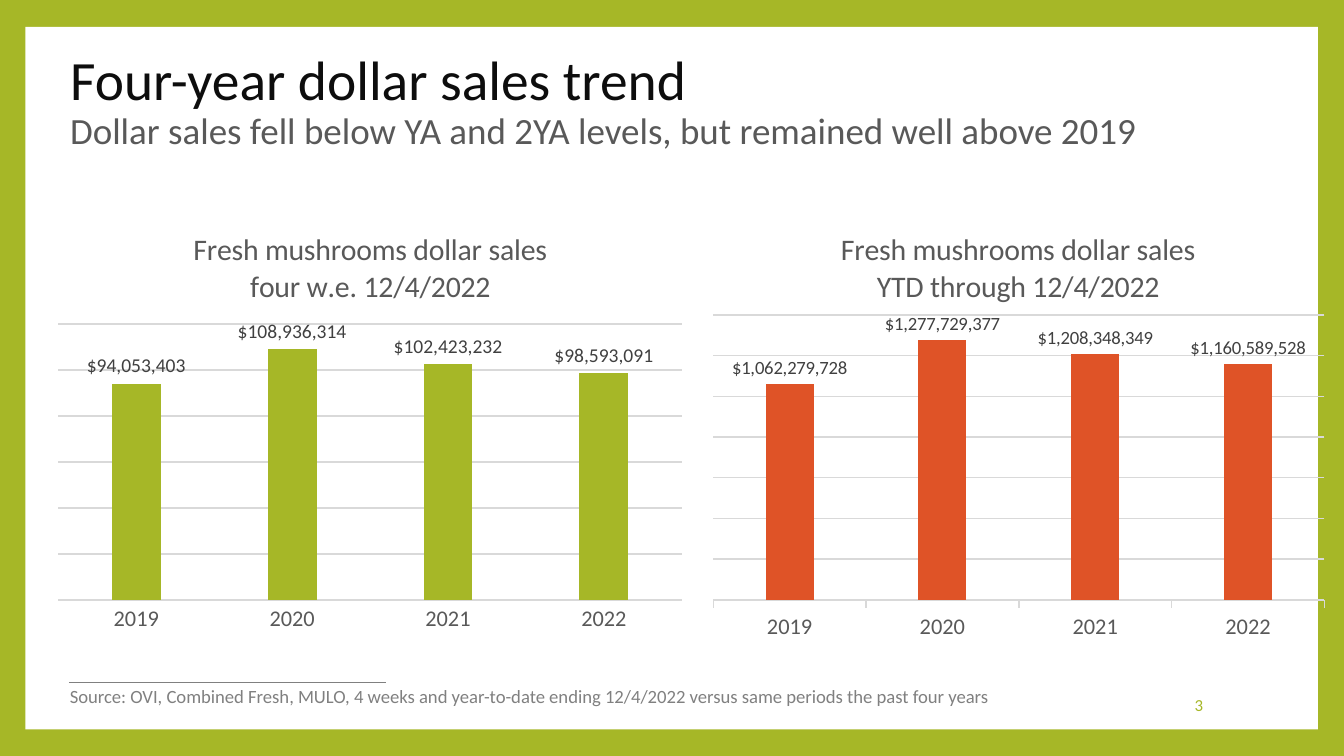
from copy import deepcopy
from pptx import Presentation
from pptx.chart.data import CategoryChartData
from pptx.dml.color import RGBColor
from pptx.enum.chart import XL_CHART_TYPE as ChartType, XL_LABEL_POSITION as LabelPos, XL_TICK_MARK as Tick
from pptx.enum.shapes import MSO_CONNECTOR as Connector, MSO_SHAPE as Preset
from pptx.enum.text import MSO_ANCHOR as Anchor, MSO_AUTO_SIZE as AutoSize, PP_ALIGN as Align
from pptx.oxml import parse_xml
from pptx.oxml.ns import nsdecls, qn
from pptx.util import Cm, Pt

GREEN, ORANGE, GRID = "A6B727", "DF5327", "D9D9D9"
MONEY = "\\$#,##0"
YEARS = ["2019", "2020", "2021", "2022"]
HEADING = [
    ("Four-year dollar sales trend", {"size": 29.7, "color": "0D0D0D"}),
    ("Dollar sales fell below YA and 2YA levels, but remained well above 2019", {"size": 19.8, "color": "595959"}),
]
PAGE_NUMBER = "3"
SOURCE = ("Source: OVI, Combined Fresh, MULO, 4 weeks and year-to-date ending 12/4/2022 "
          "versus same periods the past four years")
CHARTS = [
    {
        "title": ["Fresh mushrooms dollar sales", "four w.e. 12/4/2022"],
        "sales": [94053403, 108936314, 102423232, 98593091],
        "color": GREEN, "label_size": 10.5, "tick": Tick.NONE,
        "top_value": 120e6, "step": 20e6,
        "left": 1.09, "width": 11.81,
        "title_at": {"x": 0.21, "y": 0.04},
        "plot_at": {"x": 0, "y": 0.26, "w": 1, "h": 0.62},
    },
    {
        "title": ["Fresh mushrooms dollar sales", "YTD through 12/4/2022"],
        "sales": [1062279728, 1277729377, 1208348349, 1160589528],
        "color": ORANGE, "label_size": 10, "tick": Tick.OUTSIDE,
        "top_value": 1.4e9, "step": 0.2e9,
        "left": 13.11, "width": 12.29,
        "title_at": {"x": 0.22, "y": 0.04},
        "plot_at": {"x": 0.03, "y": 0.24, "w": 0.94, "h": 0.64},
    },
]
CHART_TOP, CHART_HEIGHT = 3.94, 8.41


def rgb(color):
    return RGBColor.from_string(color)


def style(font, size, color):
    for name, value in {"name": "Calibri", "size": Pt(size), "bold": False}.items():
        setattr(font, name, value)
    font.color.rgb = rgb(color)


def draw_line(line, color, width):
    line.color.rgb = rgb(color)
    line.width = Pt(width)


def add_text(slide, box, text, size, color, **frame_format):
    frame = slide.shapes.add_textbox(*map(Cm, box)).text_frame
    for name, value in frame_format.items():
        setattr(frame, name, value)
    paragraph = frame.paragraphs[0]
    run = paragraph.add_run()
    run.text = text
    style(run.font, size, color)
    return paragraph


def place(parent, position, target=""):
    for old in parent.findall(qn("c:layout")):
        parent.remove(old)
    modes = "".join(f'<c:{axis}Mode val="edge"/>' for axis in "xy")
    sizes = "".join(f'<c:{key} val="{value}"/>' for key, value in position.items())
    layout = parse_xml(f'<c:layout {nsdecls("c")}><c:manualLayout>{target}{modes}{sizes}'
                       '</c:manualLayout></c:layout>')
    text = parent.find(qn("c:tx"))
    parent.insert(0 if text is None else 1, layout)


def add_heading(slide):
    title = slide.shapes.title
    box = {"left": 1.07, "top": 0.94, "width": 24, "height": 2.01}
    for name, value in box.items():
        setattr(title, name, Cm(value))
    title.element.getparent().append(title.element)
    title.text_frame.vertical_anchor = Anchor.MIDDLE
    paragraph = title.text_frame.paragraphs[0]
    paragraph.alignment = Align.LEFT
    paragraph.line_spacing = 0.9
    for index, (text, look) in enumerate(HEADING):
        if index:
            paragraph.add_line_break()
            line_break = paragraph.runs[0].font
            paragraph._p.findall(qn("a:br"))[-1].append(deepcopy(line_break._rPr))
        run = paragraph.add_run()
        run.text = text
        style(run.font, **look)


def add_sales_chart(slide, content):
    data = CategoryChartData(number_format=MONEY)
    data.categories = YEARS
    data.add_series("Series 1", content["sales"])
    box = map(Cm, (content["left"], CHART_TOP, content["width"], CHART_HEIGHT))
    chart = slide.shapes.add_chart(ChartType.COLUMN_CLUSTERED, *box, data).chart
    style(chart.font, 10, "000000")
    chart.has_legend = False

    title = chart.chart_title.text_frame
    for index, line in enumerate(content["title"]):
        paragraph = title.add_paragraph() if index else title.paragraphs[0]
        run = paragraph.add_run()
        run.text = line
        style(run.font, 16, "595959")
    place(chart.chart_title._element, content["title_at"])

    years = chart.category_axis
    years.major_tick_mark = content["tick"]
    style(years.tick_labels.font, 12, "595959")
    draw_line(years.format.line, GRID, 0.75)

    dollars = chart.value_axis
    scale = {"visible": False, "minimum_scale": 0, "maximum_scale": content["top_value"],
             "major_unit": content["step"], "has_major_gridlines": True}
    for name, value in scale.items():
        setattr(dollars, name, value)
    draw_line(dollars.major_gridlines.format.line, GRID, 0.75)

    plot = chart.plots[0]
    for name, value in {"gap_width": 219, "overlap": -27, "vary_by_categories": False}.items():
        setattr(plot, name, value)
    columns = plot.series[0]
    columns.format.fill.solid()
    columns.format.fill.fore_color.rgb = rgb(content["color"])
    labels = columns.data_labels
    label_format = {"show_value": True, "position": LabelPos.OUTSIDE_END,
                    "number_format": MONEY, "number_format_is_linked": False}
    for name, value in label_format.items():
        setattr(labels, name, value)
    style(labels.font, content["label_size"], "404040")
    plot_area = chart._chartSpace.find(qn("c:chart")).find(qn("c:plotArea"))
    place(plot_area, content["plot_at"], '<c:layoutTarget val="inner"/>')


def main():
    deck = Presentation()
    deck.slide_width, deck.slide_height = Cm(25.4), Cm(14.29)
    slide = deck.slides.add_slide(deck.slide_layouts[5])
    slide.background.fill.solid()
    slide.background.fill.fore_color.rgb = rgb(GREEN)

    panel = slide.shapes.add_shape(Preset.RECTANGLE, *map(Cm, (0.48, 0.51, 24.43, 13.28)))
    panel.shadow.inherit = False
    panel.fill.solid()
    panel.fill.fore_color.rgb = rgb("FFFFFF")
    panel.line.fill.background()

    rule = slide.shapes.add_connector(Connector.STRAIGHT, *map(Cm, (1.3, 12.9, 7.29, 12.9)))
    draw_line(rule.line, "808080", 0.79)
    rule._element.spPr.append(parse_xml(f'<a:effectLst {nsdecls("a")}/>'))

    add_heading(slide)
    number = add_text(slide, (19.43, 12.95, 3.56, 0.76), PAGE_NUMBER, 9, GREEN,
                      word_wrap=True, vertical_anchor=Anchor.MIDDLE)
    number.alignment = Align.RIGHT
    add_text(slide, (1.07, 12.83, 18.34, 0.69), SOURCE, 10, "808080",
             word_wrap=False, auto_size=AutoSize.SHAPE_TO_FIT_TEXT)
    for content in CHARTS:
        add_sales_chart(slide, content)
    deck.save("out.pptx")


if __name__ == "__main__":
    main()
